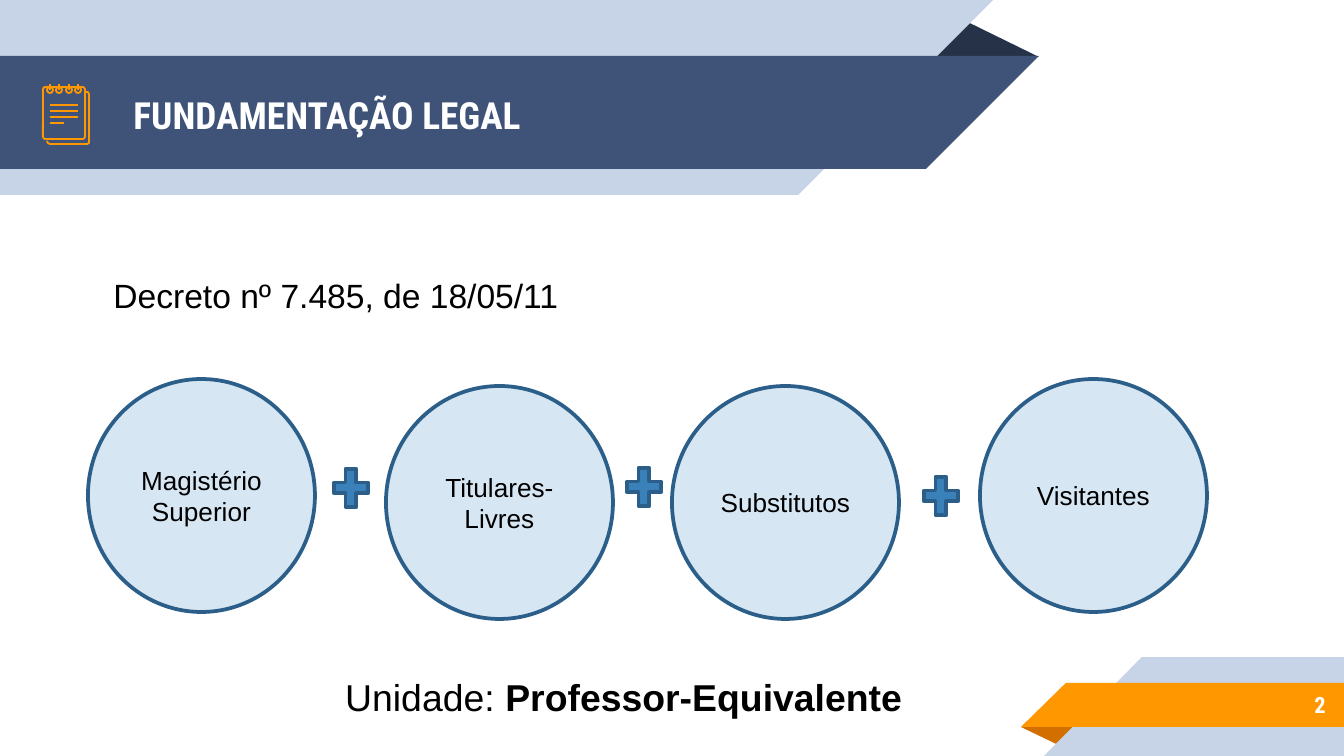
from lxml import etree
from pptx import Presentation
from pptx import util as u
from pptx.dml.color import RGBColor
from pptx.enum import shapes, text
from pptx.oxml.ns import qn

PX = 914400 / 134.4
KIND = shapes.MSO_SHAPE
NAVY, PALE, ORANGE = "3F5378", "C7D3E6", "FF9800"
BLUE_EDGE = "2B5F8A"


def px(*lengths):
    """Turn pixel lengths into EMU."""
    return [u.Emu(round(length * PX)) for length in lengths]


def paint(shape, fill=None, line=None, width=1):
    """Set fill and outline (None leaves them empty) and drop the shadow."""
    shape.shadow.inherit = False
    if fill:
        shape.fill.solid()
        shape.fill.fore_color.rgb = RGBColor.from_string(fill)
    else:
        shape.fill.background()
    if line:
        shape.line.color.rgb = RGBColor.from_string(line)
        shape.line.width = u.Pt(width)
    else:
        shape.line.fill.background()


deck = Presentation()
deck.slide_width, deck.slide_height = px(1344, 756)
page = deck.slides.add_slide(deck.slide_layouts[1])
title, body = page.placeholders

# Folded ribbons: header at the top left, page number at the bottom right
ribbons = [
    (KIND.ISOSCELES_TRIANGLE, (925, 19, 114, 38), "263248", 0, False),
    (KIND.RECTANGLE, (0, 0, 798, 195), PALE, 0, False),
    (KIND.RIGHT_TRIANGLE, (798, 0, 195, 195), PALE, 180, True),
    (KIND.RECTANGLE, (0, 56, 926, 113), NAVY, 0, False),
    (KIND.RIGHT_TRIANGLE, (926, 56, 113, 113), NAVY, 180, True),
    (KIND.ISOSCELES_TRIANGLE, (1021, 727, 58, 19), "D26F00", 180, False),
    (KIND.RECTANGLE, (1142, 657, 202, 99), PALE, 0, False),
    (KIND.RIGHT_TRIANGLE, (1044, 657, 98, 99), PALE, 0, True),
    (KIND.RECTANGLE, (1066, 683, 278, 44), ORANGE, 0, False),
    (KIND.RIGHT_TRIANGLE, (1021, 683, 45, 44), ORANGE, 0, True),
]
for kind, place, colour, turn, mirrored in ribbons:
    ribbon = page.shapes.add_shape(kind, *px(*place))
    paint(ribbon, colour)
    ribbon.rotation = turn
    if kind == KIND.ISOSCELES_TRIANGLE:
        ribbon.adjustments[0] = 0.32
    if mirrored:
        ribbon._element.spPr.find(qn("a:xfrm")).set("flipH", "1")

# Notepad icon
outline = page.shapes.build_freeform(47, 141, scale=PX)
outline.add_line_segments(
    [(48, 143), (50, 144), (87, 144), (89, 143), (89, 94), (88, 92), (86, 92)],
    close=False)
paint(outline.convert_to_shape(), line=ORANGE)
sheet = page.shapes.add_shape(KIND.ROUNDED_RECTANGLE, *px(43, 87, 42, 52))
sheet.adjustments[0] = 0.06
paint(sheet, line=ORANGE)

strokes = [(50, y, 64 if y == 123 else 78, y) for y in range(105, 124, 6)]
for x in (50, 59, 69, 78):
    ring = page.shapes.add_shape(KIND.OVAL, *px(x - 3, 87, 6, 6))
    paint(ring, line=ORANGE)
    strokes.append((x, 84, x, 90))
for ends in strokes:
    stroke = page.shapes.add_connector(shapes.MSO_CONNECTOR.STRAIGHT, *px(*ends))
    stroke.line.color.rgb = RGBColor.from_string(ORANGE)
    stroke.line.width = u.Pt(1)
    etree.SubElement(stroke._element.spPr, qn("a:effectLst"))

# Staff categories, added together
categories = [("Magistério Superior", 88, 379), ("Titulares-Livres", 386, 386),
              ("Substitutos", 672, 386), ("Visitantes", 980, 379)]
circles = []
for name, left, top in categories:
    circle = page.shapes.add_shape(KIND.OVAL, *px(left, top, 227, 233))
    paint(circle, "D6E6F2", BLUE_EDGE, 2)
    circles.append((circle, name))
for left, top in [(328, 462), (621, 461), (918, 470)]:
    plus = page.shapes.add_shape(KIND.MATH_PLUS, *px(left, top, 46, 52))
    paint(plus, "3A81BA", BLUE_EDGE, 2)

# Text
for holder, place in [(title, (120, 58, 773, 113)), (body, (85, 257, 1220, 258))]:
    holder.left, holder.top, holder.width, holder.height = px(*place)
    page.shapes._spTree.append(holder._element)
number = page.shapes.add_textbox(*px(1120, 681, 219, 47))
unit = page.shapes.add_textbox(*px(332, 668, 595, 59))

LEFT, CENTER, RIGHT = text.PP_ALIGN.LEFT, text.PP_ALIGN.CENTER, text.PP_ALIGN.RIGHT
labels = [
    (title, "FUNDAMENTAÇÃO LEGAL", "Roboto Condensed", 20, "FFFFFF", True, LEFT),
    (number, "2", "Roboto Condensed", 12, "FFFFFF", True, RIGHT),
    (body, "Decreto nº 7.485, de 18/05/11", "Arial", 18, "000000", False, LEFT),
    (unit, "Unidade: ", "Arial", 20, "000000", None, LEFT),
]
labels += [(circle, name, "Arial", 14, "000000", False, CENTER)
           for circle, name in circles]
for box, words, font, size, colour, bold, align in labels:
    frame = box.text_frame
    frame.word_wrap = True
    frame.auto_size = text.MSO_AUTO_SIZE.NONE
    frame.vertical_anchor = (text.MSO_ANCHOR.TOP if box in (body, unit)
                             else text.MSO_ANCHOR.MIDDLE)
    if box in (title, number, body):
        frame.margin_top = frame.margin_bottom = u.Inches(0.1)
    para = frame.paragraphs[0]
    para.add_run().text = words
    para.alignment = align
    para.font.name, para.font.size, para.font.bold = font, u.Pt(size), bold
    para.font.color.rgb = RGBColor.from_string(colour)

span = unit.text_frame.paragraphs[0].add_run()
span.text = "Professor-Equivalente"
span.font.bold = True
unit.text_frame.auto_size = text.MSO_AUTO_SIZE.SHAPE_TO_FIT_TEXT

decree = body.text_frame.paragraphs[0]
decree.space_before = u.Pt(0)
decree.line_spacing = 1.1
settings = decree._p.get_or_add_pPr()
settings.set("marL", str(px(15)[0]))
settings.set("indent", "0")
settings.insert_element_before(
    etree.Element(qn("a:buNone")), "a:tabLst", "a:defRPr", "a:extLst")

deck.save("out.pptx")
